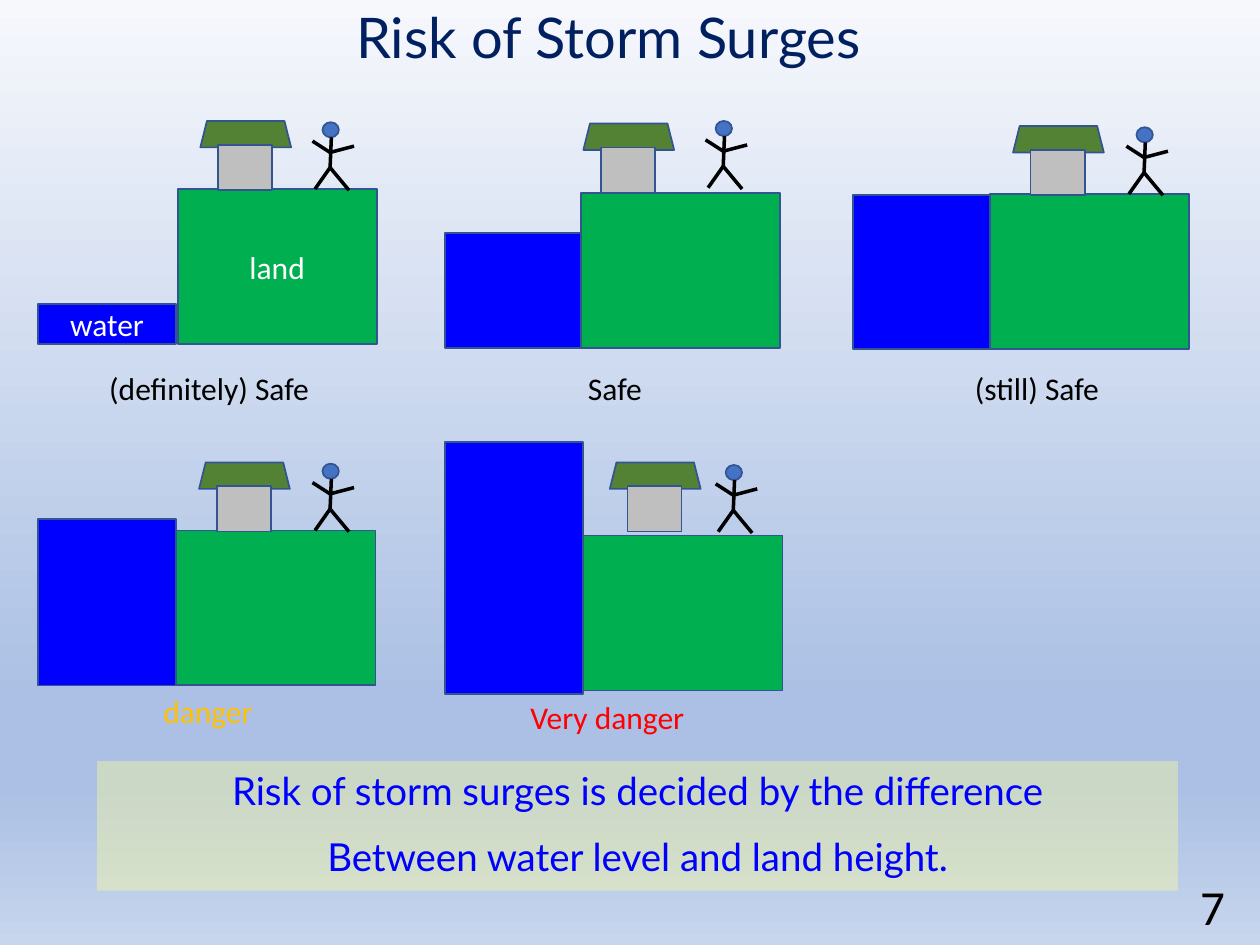
"""Build the slide on the risk of storm surges."""
from lxml.etree import SubElement
from pptx import Presentation
from pptx.dml.color import RGBColor as Color
from pptx.enum.shapes import MSO_CONNECTOR as Link, MSO_SHAPE as Kind
from pptx.enum.text import MSO_ANCHOR as Anchor, PP_ALIGN as Align
from pptx.oxml.ns import qn
from pptx.util import Inches, Pt

BLACK = Color(0, 0, 0)
WHITE = Color(255, 255, 255)
NAVY = Color(0x00, 0x20, 0x60)
BLUE = Color(0x00, 0x00, 0xFF)
GREEN = Color(0x00, 0xB0, 0x50)
ROOF = Color(0x54, 0x82, 0x35)
WALL = Color(0xBF, 0xBF, 0xBF)
HEAD = Color(0x44, 0x72, 0xC4)
EDGE = Color(0x32, 0x54, 0x91)
AMBER = Color(0xFF, 0xC0, 0x00)
RED = Color(0xFF, 0x00, 0x00)
CREAM = Color(0xFF, 0xFF, 0x99)
SKY = [(0, "F6F8FC"), (74, "ABC0E4"), (83, "ABC0E4"), (100, "C7D5ED")]

TITLE = "Risk of Storm Surges"
CLAIM = ["Risk of storm surges is decided by the difference",
         "Between water level and land height."]
PAGE = "7"

SCENES = [
    dict(note="(definitely) Safe", hue=BLACK, at=(0.55, 2.88), names=("water", "land"),
         water=(0.3, 2.41, 0.32), land=(1.41, 1.5), house=(1.59, 0.96), man=(2.56, 0.97)),
    dict(note="Safe", hue=BLACK, at=(3.77, 2.88), names=("", ""),
         water=(3.53, 1.85, 0.91), land=(4.61, 1.53), house=(4.63, 0.98), man=(5.68, 0.96)),
    dict(note="(still) Safe", hue=BLACK, at=(7.12, 2.88), names=("", ""),
         water=(6.77, 1.55, 1.22), land=(7.86, 1.54), house=(8.04, 1), man=(9.02, 1.01)),
    dict(note="danger", hue=AMBER, at=(0.54, 5.44), names=("", ""),
         water=(0.3, 4.12, 1.32), land=(1.4, 4.21), house=(1.58, 3.67), man=(2.56, 3.68)),
    dict(note="Very danger", hue=RED, at=(3.71, 5.49), names=("", ""),
         water=(3.53, 3.51, 2), land=(4.63, 4.25), house=(4.84, 3.67), man=(5.76, 3.69)),
]
NECK, CHEST, HIP = (0.07, 0.12), (0.06, 0.24), (0.06, 0.36)
LIMBS = [(HIP, NECK), (HIP, (-0.06, 0.53)), (HIP, (0.21, 0.54)),
         (CHEST, (0.25, 0.19)), (CHEST, (-0.08, 0.15))]


def write(shape, lines, size, hue, font="Calibri", align=Align.CENTER, gap=0):
    frame = shape.text_frame
    frame.word_wrap = True
    for i, line in enumerate(lines):
        para = frame.paragraphs[0] if i == 0 else frame.add_paragraph()
        para.text = line
        para.alignment = align
        para.space_before = Pt(gap)
        para.font.size = Pt(size)
        para.font.name = font
        para.font.color.rgb = hue
    return frame


def label(shapes, box, *args, **more):
    return write(shapes.add_textbox(*map(Inches, box)), *args, **more)


def block(shapes, kind, box, hue, edge=EDGE):
    shape = shapes.add_shape(kind, *map(Inches, box))
    shape.shadow.inherit = False
    shape.fill.solid()
    shape.fill.fore_color.rgb = hue
    if edge is None:
        shape.line.fill.background()
    else:
        shape.line.color.rgb = edge
        shape.line.width = Pt(1)
    return shape


def house(shapes, x, y):
    block(shapes, Kind.TRAPEZOID, (x, y, 0.72, 0.21), ROOF)
    block(shapes, Kind.RECTANGLE, (x + 0.14, y + 0.19, 0.43, 0.36), WALL)


def person(shapes, x, y):
    block(shapes, Kind.OVAL, (x, y, 0.13, 0.12), HEAD)
    for (ax, ay), (bx, by) in LIMBS:
        ends = map(Inches, (x + ax, y + ay, x + bx, y + by))
        limb = shapes.add_connector(Link.STRAIGHT, *ends)
        limb.line.color.rgb = BLACK
        limb.line.width = Pt(2)
        SubElement(limb.element.spPr, qn("a:effectLst"))


def scene(shapes, note, hue, at, names, water, land, house_at, man):
    x, y, tall = water
    parts = [((x, y, 1.1, tall), BLUE), ((*land, 1.58, 1.23), GREEN)]
    for (box, fill), name in zip(parts, names):
        shape = block(shapes, Kind.RECTANGLE, box, fill)
        if name:
            write(shape, [name], 18, WHITE).vertical_anchor = Anchor.MIDDLE
    house(shapes, *house_at)
    person(shapes, *man)
    label(shapes, (*at, 2.22, 0.4), [note], 18, hue)


def paint(slide):
    fill = slide.background.fill
    fill.gradient()
    fill.gradient_angle = 270
    stops = slide.element.find(".//" + qn("a:gsLst"))
    stops.clear()
    for pos, hue in SKY:
        stop = SubElement(stops, qn("a:gs"), pos=str(pos * 1000))
        SubElement(stop, qn("a:srgbClr"), val=hue)


def main():
    deck = Presentation()
    deck.slide_width, deck.slide_height = Inches(10), Inches(7.5)
    slide = deck.slides.add_slide(deck.slide_layouts[6])
    paint(slide)
    shapes = slide.shapes
    label(shapes, (0.3, -0.03, 9.06, 0.63), [TITLE], 32, NAVY, "Lato")

    panel = block(shapes, Kind.RECTANGLE, (0.77, 6.04, 8.58, 1.03), CREAM, None)
    tint = panel.element.spPr.find(".//" + qn("a:srgbClr"))
    SubElement(tint, qn("a:alpha"), val="39000")
    write(panel, CLAIM, 22, BLUE, "Lato", gap=11).vertical_anchor = Anchor.TOP

    for s in SCENES:
        group = shapes.add_group_shape().shapes
        scene(group, s["note"], s["hue"], s["at"], s["names"],
              s["water"], s["land"], s["house"], s["man"])

    page = label(shapes, (7.57, 6.99, 2.25, 0.4), [PAGE], 28, BLACK, align=Align.RIGHT)
    page.vertical_anchor = Anchor.MIDDLE
    deck.save("out.pptx")


if __name__ == "__main__":
    main()
